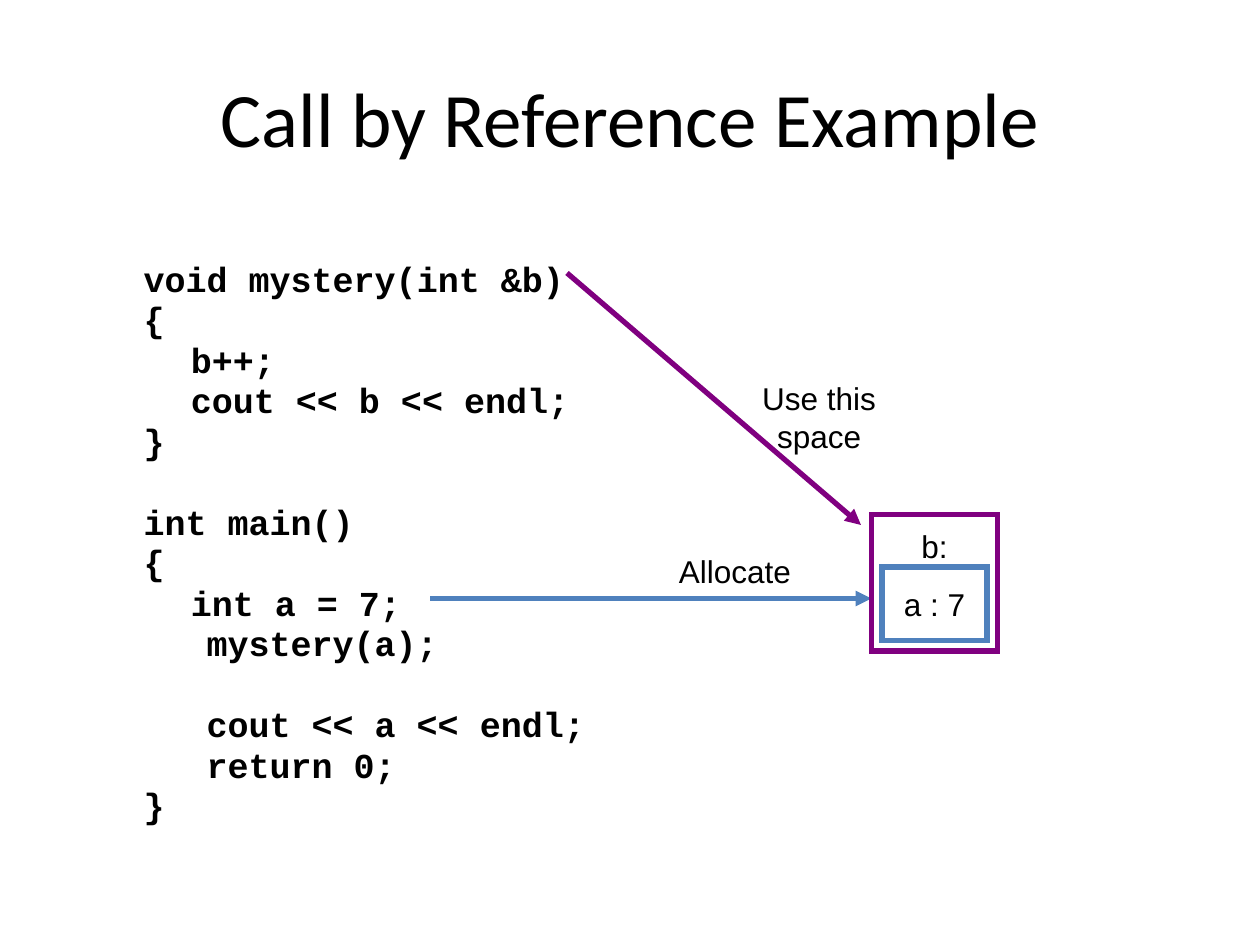
from pptx import Presentation
from pptx.dml.color import RGBColor
from pptx.enum import shapes, text
from pptx.oxml.ns import qn
from pptx.util import Pt
from lxml import etree

BLACK = RGBColor(0x00, 0x00, 0x00)
BLUE = RGBColor(0x4F, 0x81, 0xBD)
PURPLE = RGBColor(0x80, 0x00, 0x80)

TITLE = "Call by Reference Example"
# Text and level; each block of code is set off by a gap above it.
CODE_BLOCKS = [
    [("void mystery(int &b)", 0), ("{", 0), ("b++;", 1),
     ("cout << b << endl;", 1), ("}", 0)],
    [("int main()", 0), ("{", 0), ("int a = 7;", 1), ("mystery(a);", 2)],
    [("cout << a << endl;", 2), ("return 0;", 2), ("}", 0)],
]
LEVEL_INDENTS = [0, 27, 36]
LINE_GAP, BLOCK_GAP = 3.9, 27.1
CODE_MARGIN_TOP = 31.6

# Left, top, width, height
TITLE_BOX = (36, 21.6, 648, 90)
CODE_BOX = (74.8, 120, 603, 402)
VARIABLE_A = ("a : 7", (504, 324, 60, 42), BLUE, text.MSO_ANCHOR.MIDDLE)
VARIABLE_B = ("b:", (498, 294, 72, 78), PURPLE, text.MSO_ANCHOR.TOP)
LABELS = [
    ("Allocate", (372, 312, 96, 29)),
    ("Use this space", (420, 213, 96, 51)),
]
# Start x, start y, end x, end y
ALLOCATE_ARROW = ((246, 342, 498, 342), BLUE)
REFERENCE_ARROW = ((324, 156, 492, 300), PURPLE)


def points(values):
    return [Pt(v) for v in values]


def place(shape, box):
    shape.left, shape.top, shape.width, shape.height = points(box)


def style(p, name, size, bold=False):
    p.font.name, p.font.size, p.font.bold = name, Pt(size), bold
    p.font.color.rgb = BLACK


def fill_code(tf):
    tf.auto_size = text.MSO_AUTO_SIZE.NONE
    tf.margin_top = Pt(CODE_MARGIN_TOP)
    p = None
    for block in CODE_BLOCKS:
        for i, (line, level) in enumerate(block):
            p = tf.add_paragraph() if p else tf.paragraphs[0]
            p.text = line
            p.line_spacing = 0.8
            p.space_before = Pt(LINE_GAP if i else BLOCK_GAP)
            style(p, "Courier New", 20, True)
            pPr = p._p.get_or_add_pPr()
            pPr.set("marL", str(Pt(LEVEL_INDENTS[level])))
            pPr.set("indent", "0")
            # The bullet setting goes after spacing and before run defaults.
            pPr.find(qn("a:defRPr")).addprevious(
                etree.Element(qn("a:buNone")))


def add_arrow(s, ends, color):
    line = s.shapes.add_connector(
        shapes.MSO_CONNECTOR.STRAIGHT, *points(ends))
    line.line.color.rgb = color
    line.line.width = Pt(3)
    etree.SubElement(line.line._get_or_add_ln(), qn("a:tailEnd"),
                     type="triangle")
    etree.SubElement(line._element.spPr, qn("a:effectLst"))


def write_centred(tf, words):
    p = tf.paragraphs[0]
    p.text = words
    p.alignment = text.PP_ALIGN.CENTER
    style(p, "Arial", 18)


def add_variable(s, words, box, color, anchor):
    sp = s.shapes.add_shape(shapes.MSO_SHAPE.RECTANGLE, *points(box))
    sp.shadow.inherit = False
    sp.fill.background()
    sp.line.color.rgb = color
    sp.line.width = Pt(3)
    etree.SubElement(sp.line._get_or_add_ln(), qn("a:miter"), lim="800000")
    tf = sp.text_frame
    tf.word_wrap = False
    tf.vertical_anchor = anchor
    if anchor == text.MSO_ANCHOR.TOP:
        tf.margin_top = Pt(7)
    write_centred(tf, words)


def add_label(s, words, box):
    tf = s.shapes.add_textbox(*points(box)).text_frame
    tf.word_wrap = True
    write_centred(tf, words)


def main():
    prs = Presentation()
    prs.slide_width, prs.slide_height = Pt(720), Pt(540)
    s = prs.slides.add_slide(prs.slide_layouts[1])

    title, body = s.placeholders
    place(title, TITLE_BOX)
    title.text_frame.text = TITLE
    style(title.text_frame.paragraphs[0], "Calibri", 44)
    place(body, CODE_BOX)
    fill_code(body.text_frame)

    add_arrow(s, *ALLOCATE_ARROW)
    add_variable(s, *VARIABLE_A)
    add_arrow(s, *REFERENCE_ARROW)
    for label in LABELS:
        add_label(s, *label)
    add_variable(s, *VARIABLE_B)

    prs.save("out.pptx")


if __name__ == "__main__":
    main()
